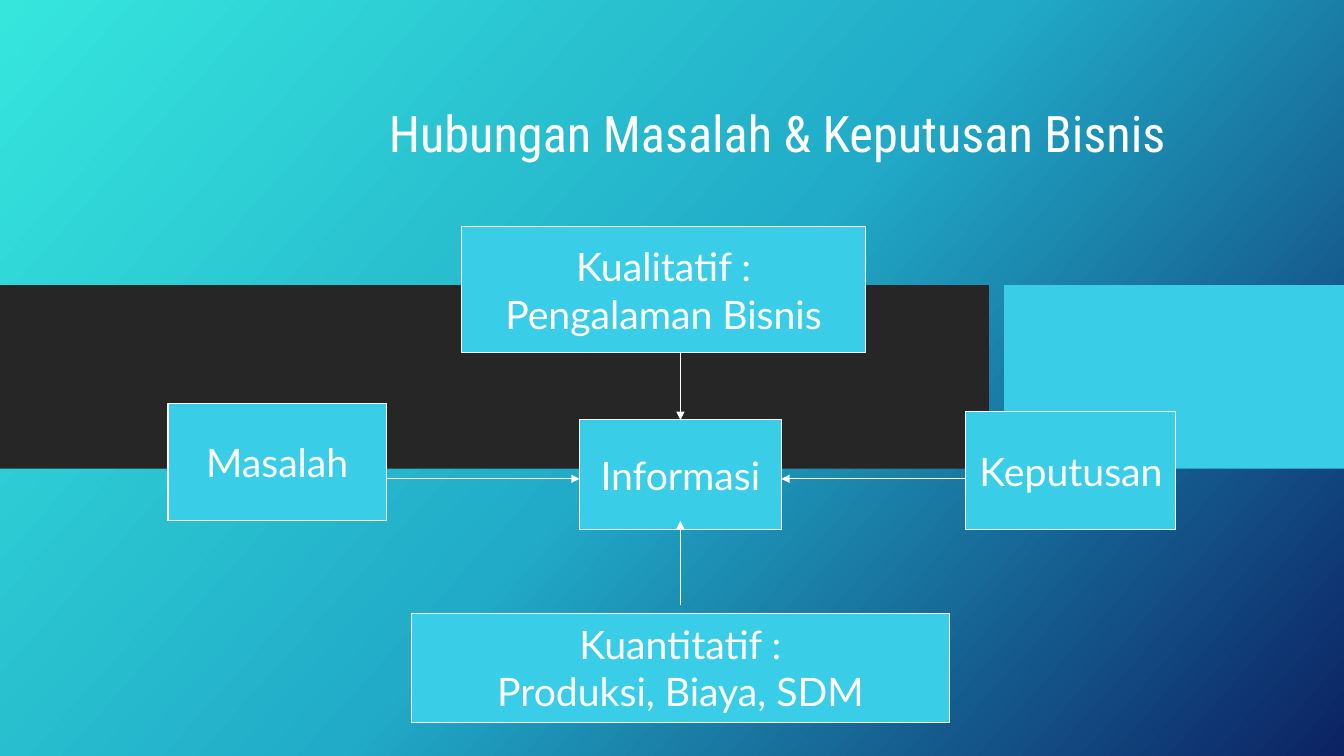
from copy import deepcopy

from lxml.etree import SubElement
from pptx import Presentation
from pptx.dml.color import RGBColor
from pptx.enum.shapes import MSO_CONNECTOR, MSO_SHAPE
from pptx.enum.text import MSO_ANCHOR, PP_ALIGN
from pptx.oxml.ns import qn
from pptx.util import Pt

COLORS = {"white": "FFFFFF", "cyan": "39CDE7", "dark": "262626",
          "aqua": "36E6DD", "blue": "21ABC8", "navy": "0C2263"}
GRADIENT = [(0, "aqua"), (0.5, "blue"), (1, "navy")]
GRADIENT_ANGLE = 360 - 42  # counter-clockwise

TITLE = "Hubungan Masalah & Keputusan Bisnis"
TITLE_AREA = (120, 0, 720, 120)

# left, top, width, height
BANDS = [("dark", (0, 203.7, 706.4, 131)),
         ("cyan", (717.2, 203.7, 242.8, 131))]
BOXES = [
    (["Informasi"], (414, 300, 144, 78)),
    (["Keputusan"], (690, 294, 150, 84)),
    (["Masalah"], (120, 288, 156, 84)),
    (["Kualitatif :", "Pengalaman Bisnis"], (330, 162, 288, 90)),
    (["Kuantitatif :", "Produksi, Biaya, SDM"], (294, 438, 384, 78)),
]
ARROWS = [((486, 252), (486, 300)), ((486, 432), (486, 372)),
          ((276, 342), (414, 342)), ((690, 342), (558, 342))]


def rgb(name):
    return RGBColor.from_string(COLORS[name])


def set_background(slide):
    fill = slide.background.fill
    fill.gradient()
    fill.gradient_angle = GRADIENT_ANGLE
    stop_list = slide.element.find(".//" + qn("a:gsLst"))
    stop_list.append(deepcopy(stop_list[0]))
    for stop, (position, name) in zip(fill.gradient_stops, GRADIENT):
        stop.position = position
        stop.color.rgb = rgb(name)


def write(tf, lines, font, size, align):
    for i, line in enumerate(lines):
        p = tf.add_paragraph() if i else tf.paragraphs[0]
        p.alignment = align
        r = p.add_run()
        r.text = line
        r.font.name = font
        r.font.size = Pt(size)
        r.font.color.rgb = rgb("white")


def add_rect(slide, area, color):
    sp = slide.shapes.add_shape(MSO_SHAPE.RECTANGLE, *map(Pt, area))
    sp.shadow.inherit = False
    sp.fill.solid()
    sp.fill.fore_color.rgb = rgb(color)
    sp.line.fill.background()
    return sp


def add_title(slide):
    tf = slide.shapes.add_textbox(*map(Pt, TITLE_AREA)).text_frame
    tf.word_wrap = True
    tf.vertical_anchor = MSO_ANCHOR.BOTTOM
    write(tf, [TITLE], "Roboto Condensed", 36, PP_ALIGN.RIGHT)
    tf.paragraphs[0].line_spacing = 0.9


def add_box(slide, lines, area):
    sp = add_rect(slide, area, "cyan")
    sp.line.color.rgb = rgb("white")
    sp.line.width = Pt(0.75)
    tf = sp.text_frame
    tf.word_wrap = False
    tf.vertical_anchor = MSO_ANCHOR.MIDDLE
    write(tf, lines, "Lato", 28, PP_ALIGN.CENTER)
    return sp


def add_arrow(slide, start, end):
    line = slide.shapes.add_connector(MSO_CONNECTOR.STRAIGHT,
                                      *map(Pt, start + end))
    line.line.color.rgb = rgb("white")
    line.line.width = Pt(0.75)
    SubElement(line.line._get_or_add_ln(), qn("a:tailEnd"), type="triangle")
    SubElement(line._element.spPr, qn("a:effectLst"))
    return line


def main():
    prs = Presentation()
    prs.slide_width, prs.slide_height = Pt(960), Pt(540)
    s = prs.slides.add_slide(prs.slide_layouts[6])
    set_background(s)
    for color, area in BANDS:
        add_rect(s, area, color)
    add_title(s)
    boxes = [add_box(s, lines, area) for lines, area in BOXES]
    arrows = [add_arrow(s, start, end) for start, end in ARROWS]
    information, from_qualitative = boxes[0], arrows[0]
    from_qualitative.end_connect(information, 0)
    prs.save("out.pptx")


if __name__ == "__main__":
    main()
